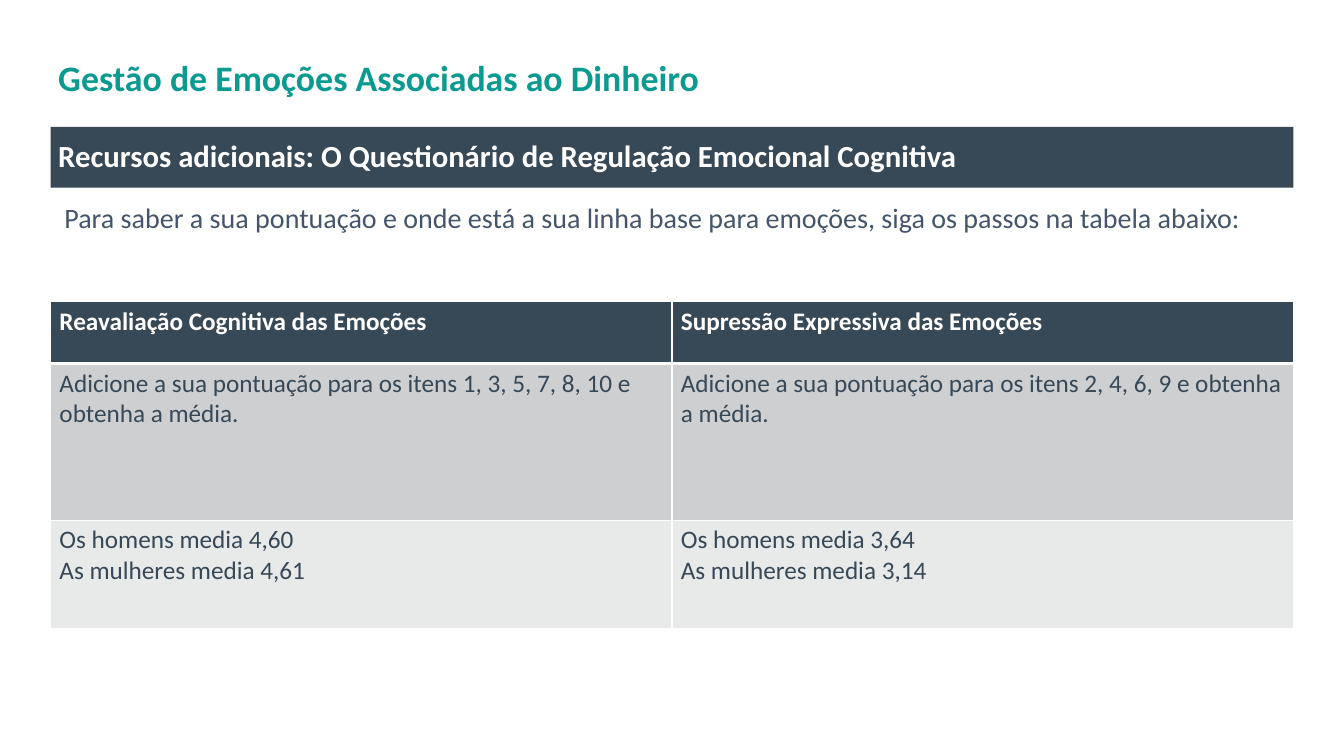
from dataclasses import dataclass

from lxml.etree import SubElement
from pptx import Presentation
from pptx.dml.color import RGBColor
from pptx.enum.shapes import MSO_SHAPE as Shape
from pptx.enum.text import MSO_ANCHOR as Anchor, PP_ALIGN as Align
from pptx.oxml.ns import qn
from pptx.util import Pt


@dataclass(frozen=True)
class Theme:
    font: str = "Calibri"
    teal: str = "0A9A8F"
    navy: str = "374856"
    slate: str = "44546A"
    white: str = "FFFFFF"
    mid_grey: str = "CECFD1"
    light_grey: str = "E8E9E9"
    title_size: float = 28
    banner_size: float = 24
    intro_size: float = 21.9
    table_size: float = 19.7


THEME = Theme()
SLIDE_SIZE = {"slide_width": Pt(1050), "slide_height": Pt(591)}
LEFT, WIDTH = 39.5, 971
INSETS = {"margin_left": Pt(6), "margin_right": Pt(6),
          "margin_top": Pt(3.6), "margin_bottom": Pt(3.6)}
CELL_INSETS = {**INSETS, "margin_left": Pt(7)}
COLUMN_WIDTH = WIDTH / 2
ROW_HEIGHTS = (48.5, 122.5, 85)
ROW_FILLS = (THEME.navy, THEME.mid_grey, THEME.light_grey)
ROWS = (
    ("Reavaliação Cognitiva das Emoções",
     "Supressão Expressiva das Emoções"),
    ("Adicione a sua pontuação para os itens 1, 3, 5, 7, 8, 10 e obtenha a média.",
     "Adicione a sua pontuação para os itens 2, 4, 6, 9 e obtenha a média."),
    ("Os homens media 4,60\nAs mulheres media 4,61",
     "Os homens media 3,64\nAs mulheres media 3,14"),
)


def apply(target, formats):
    for name, value in formats.items():
        setattr(target, name, value)


def write(frame, text, size, color, bold=False, **paragraph_format):
    frame.text = text
    frame.word_wrap = True
    for paragraph in frame.paragraphs:
        apply(paragraph, {"alignment": Align.LEFT, **paragraph_format})
        for run in paragraph.runs:
            apply(run.font, {"name": THEME.font, "size": Pt(size), "bold": bold})
            run.font.color.rgb = RGBColor.from_string(color)


def paint(fill, color):
    fill.solid()
    fill.fore_color.rgb = RGBColor.from_string(color)


def add_text(slide, top, height, **insets):
    box = slide.shapes.add_textbox(Pt(LEFT), Pt(top), Pt(WIDTH), Pt(height))
    apply(box.text_frame, {**INSETS, **insets})
    return box.text_frame


def add_banner(slide, text, top, height):
    banner = slide.shapes.add_shape(
        Shape.RECTANGLE, Pt(LEFT), Pt(top), Pt(WIDTH), Pt(height))
    banner.shadow.inherit = False
    paint(banner.fill, THEME.navy)
    banner.line.fill.background()
    apply(banner.text_frame, {**INSETS, "vertical_anchor": Anchor.MIDDLE})
    write(banner.text_frame, text, THEME.banner_size, THEME.white,
          bold=True, line_spacing=0.9)


def set_borders(cell, widths):
    properties = cell._tc.get_or_add_tcPr()
    for side, width in widths.items():
        line = SubElement(properties, qn(f"a:ln{side}"), w=str(Pt(width)))
        solid = SubElement(line, qn("a:solidFill"))
        SubElement(solid, qn("a:srgbClr"), val=THEME.white)


def add_score_table(slide, top):
    table = slide.shapes.add_table(
        len(ROWS), len(ROWS[0]), Pt(LEFT), Pt(top),
        Pt(WIDTH), Pt(sum(ROW_HEIGHTS))).table
    for column in table.columns:
        column.width = Pt(COLUMN_WIDTH)
    for index, (texts, height, fill) in enumerate(zip(ROWS, ROW_HEIGHTS, ROW_FILLS)):
        table.rows[index].height = Pt(height)
        header = index == 0
        # The rule under the header is thicker than the other borders
        borders = {"L": 1, "R": 1, "T": 1, "B": 3 if header else 1}
        for column, text in enumerate(texts):
            cell = table.cell(index, column)
            apply(cell, CELL_INSETS)
            set_borders(cell, borders)
            paint(cell.fill, fill)
            write(cell.text_frame, text, THEME.table_size,
                  THEME.white if header else THEME.navy, bold=header)


def main():
    deck = Presentation()
    apply(deck, SLIDE_SIZE)
    slide = deck.slides.add_slide(deck.slide_layouts[6])

    # Title
    title = add_text(slide, 33.8, 57, vertical_anchor=Anchor.MIDDLE)
    write(title, "Gestão de Emoções Associadas ao Dinheiro",
          THEME.title_size, THEME.teal, bold=True, line_spacing=0.9)

    # Section banner
    add_banner(slide, "Recursos adicionais: O Questionário de Regulação Emocional Cognitiva",
               top=99.2, height=47.5)

    # Introduction
    intro = add_text(slide, 153.2, 60, margin_left=Pt(10.8))
    write(intro, "Para saber a sua pontuação e onde está a sua linha base para emoções, "
          "siga os passos na tabela abaixo:", THEME.intro_size, THEME.slate,
          space_after=Pt(6))

    # Scoring table
    add_score_table(slide, top=235.7)

    deck.save("out.pptx")


if __name__ == "__main__":
    main()
